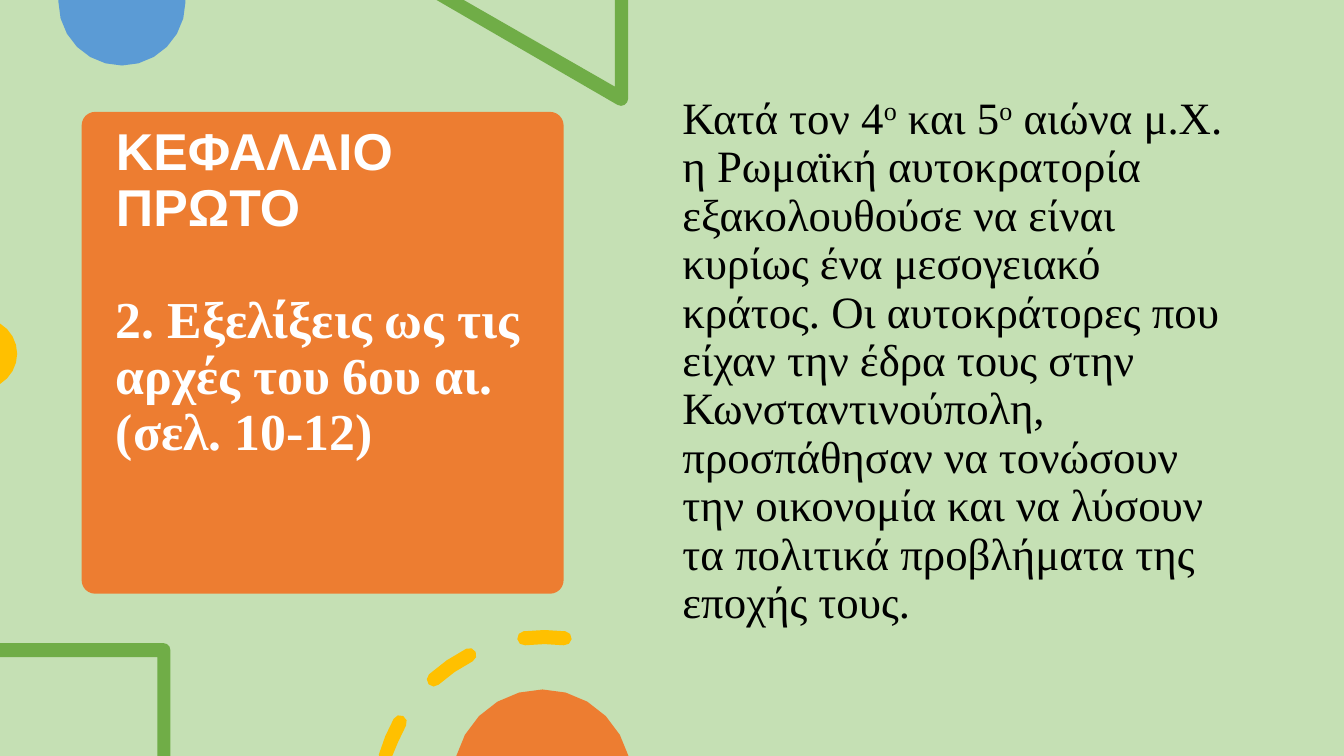
import math
from dataclasses import dataclass

import pptx
import pptx.dml.color
import pptx.enum.shapes
import pptx.enum.text
import pptx.util

PX = 9144
WIDE, HIGH = 1333, 750


@dataclass(frozen=True)
class Theme:
    """Colours, fonts and type sizes of the slide."""
    page: str = "C5E0B4"
    card: str = "ED7D31"
    blue: str = "5B9BD5"
    green: str = "70AD47"
    gold: str = "FFC000"
    light: str = "FFFFFF"
    dark: str = "000000"
    sans: str = "Arial"
    serif: str = "Times New Roman"
    head: int = 37
    body: int = 32


THEME = Theme()


def emu(size):
    """Turn px into EMU."""
    return pptx.util.Emu(round(size * PX))


def paint(fill, tone):
    """Give a fill one solid colour."""
    fill.solid()
    fill.fore_color.rgb = pptx.dml.color.RGBColor.from_string(tone)


def finish(shape, tone):
    """Fill a shape and drop its line and shadow."""
    paint(shape.fill, tone)
    shape.line.fill.background()
    shape.shadow.inherit = False


def arc(mid, top, radius, start, end, steps):
    """List points on an arc, in degrees clockwise from the right."""
    angles = [math.radians(start + (end - start) * i / steps)
              for i in range(steps + 1)]
    return [(mid + radius * math.cos(a), top + radius * math.sin(a))
            for a in angles]


def outline(slide, tone, *loops):
    """Draw one filled shape from closed loops, held inside the slide."""
    loops = [[(emu(min(max(x, 0), WIDE)), emu(min(max(y, 0), HIGH)))
              for x, y in loop] for loop in loops]
    pen = slide.shapes.build_freeform(*loops[0][0], scale=1.0)
    pen.add_line_segments(loops[0][1:], close=True)
    for loop in loops[1:]:
        pen.move_to(*loop[0])
        pen.add_line_segments(loop[1:], close=True)
    finish(pen.convert_to_shape(), tone)


def dash(mid, top, radius, start, end, half):
    """List the points of one round-ended dash along a ring."""
    first, last = arc(mid, top, radius, start, end, 1)
    return (arc(mid, top, radius + half, start, end, 2)
            + arc(*last, half, end, end + 180, 4)[1:-1]
            + arc(mid, top, radius - half, end, start, 2)
            + arc(*first, half, start + 180, start + 360, 4)[1:-1])


def decor(slide):
    """Draw the shapes cut off by the slide edges."""
    outline(slide, THEME.blue,
            [(58, 0), (184, 0)] + arc(121, 2, 63, 0, 180, 12))
    outline(slide, THEME.green,
            [(623, 0), (610, 0), (610, 86), (460, 0), (433, 0)]
            + arc(616, 98, 7, 120, 0, 4))
    outline(slide, THEME.gold, arc(-18, 351, 35, -59, 59, 8))
    outline(slide, THEME.green,
            [(0, 638), (0, 652), (156, 652), (156, HIGH), (169, HIGH)]
            + arc(162, 645, 7, 0, -90, 3))
    outline(slide, THEME.gold,
            *[dash(540, 796, 164, start, end, 7)
              for start, end in ((196, 209), (228, 243), (263, 277))])
    outline(slide, THEME.card, arc(538, 772, 88, 194, 346, 10))


def write(para, text, font, size, tone, bold=False, raised=False):
    """Add one run to a paragraph."""
    run = para.add_run()
    run.text = text
    run.font.name = font
    run.font.size = pptx.util.Pt(size)
    run.font.bold = bold
    run.font.color.rgb = pptx.dml.color.RGBColor.from_string(tone)
    if raised:
        run._r.get_or_add_rPr().set("baseline", "30000")


def setup(frame):
    """Make a text frame wrap from the top at a fixed size."""
    frame.word_wrap = True
    frame.auto_size = pptx.enum.text.MSO_AUTO_SIZE.NONE
    frame.vertical_anchor = pptx.enum.text.MSO_ANCHOR.TOP


def space(para, before):
    """Set alignment and spacing of a paragraph."""
    para.alignment = pptx.enum.text.PP_ALIGN.LEFT
    para.line_spacing = 0.9
    para.space_before = pptx.util.Pt(before)


def heading(slide, left, top, side):
    """Place the card and the title on it."""
    card = slide.shapes.add_shape(
        pptx.enum.shapes.MSO_SHAPE.ROUNDED_RECTANGLE,
        emu(left), emu(top), emu(side), emu(side))
    card.adjustments[0] = 0.028
    finish(card, THEME.card)
    title = slide.shapes.title
    card._element.addnext(title._element)
    title.left, title.top = emu(left + 24), emu(top + 9)
    title.width, title.height = emu(side - 47), emu(side - 22)
    frame = title.text_frame
    setup(frame)
    first, second = frame.paragraphs[0], frame.add_paragraph()
    space(first, 0)
    space(second, 40)
    write(first, "ΚΕΦΑΛΑΙΟ ΠΡΩΤΟ", THEME.sans, THEME.head, THEME.light, True)
    write(second, "2. Εξελίξεις ως τις αρχές του 6ου αι. (σελ. 10-12)",
          THEME.serif, THEME.head, THEME.light, True)


def story(slide, left, top, width, height):
    """Place the body text."""
    box = slide.shapes.add_textbox(
        emu(left), emu(top), emu(width), emu(height))
    setup(box.text_frame)
    para = box.text_frame.paragraphs[0]
    space(para, 10)
    parts = (
        ("Κατά τον 4", False), ("ο", True), (" και 5", False), ("ο", True),
        (" αιώνα μ.Χ. η Ρωμαϊκή αυτοκρατορία εξακολουθούσε να είναι κυρίως "
         "ένα μεσογειακό κράτος. Οι αυτοκράτορες που είχαν την έδρα τους στην "
         "Κωνσταντινούπολη, προσπάθησαν να τονώσουν την οικονομία και να "
         "λύσουν τα πολιτικά προβλήματα της εποχής τους.", False))
    for text, raised in parts:
        write(para, text, THEME.serif, THEME.body, THEME.dark, raised=raised)


def main():
    """Build and save the slide."""
    deck = pptx.Presentation()
    deck.slide_width, deck.slide_height = emu(WIDE), emu(HIGH)
    slide = deck.slides.add_slide(deck.slide_layouts.get_by_name("Title Only"))
    paint(slide.background.fill, THEME.page)
    heading(slide, 81, 111, 478)
    decor(slide)
    story(slide, 667, 90, 575, 614)
    deck.save("out.pptx")


if __name__ == "__main__":
    main()
